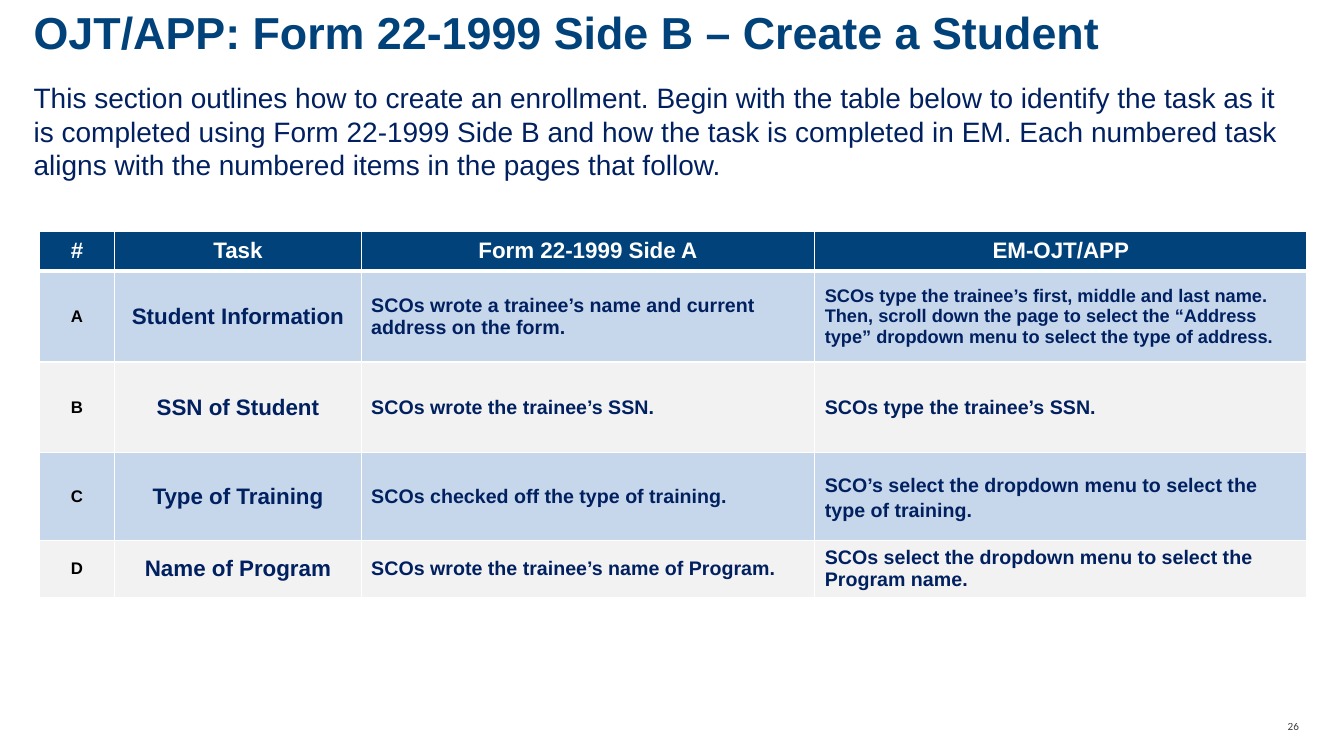
from lxml import etree
from pptx import Presentation
from pptx.dml.color import RGBColor
from pptx.enum.text import MSO_ANCHOR, PP_ALIGN
from pptx.oxml.ns import qn
from pptx.util import Pt

LEFT, CENTER, RIGHT = PP_ALIGN.LEFT, PP_ALIGN.CENTER, PP_ALIGN.RIGHT
TOP, MIDDLE = MSO_ANCHOR.TOP, MSO_ANCHOR.MIDDLE

COLORS = {
    "header": "004279",
    "navy": "002060",
    "band": "C7D7EB",
    "plain": "F2F2F2",
    "white": "FFFFFF",
    "black": "000000",
}

TITLE = "OJT/APP: Form 22-1999 Side B – Create a Student"
INTRO = (
    "This section outlines how to create an enrollment. Begin with the table "
    "below to identify the task as it is completed using Form 22-1999 Side B "
    "and how the task is completed in EM. Each numbered task aligns with the "
    "numbered items in the pages that follow."
)
HEADINGS = ["#", "Task", "Form 22-1999 Side A", "EM-OJT/APP"]
TASKS = [
    ["A", "Student Information",
     "SCOs wrote a trainee’s name and current address on the form.",
     "SCOs type the trainee’s first, middle and last name. Then, scroll down "
     "the page to select the “Address type” dropdown menu to select the type "
     "of address."],
    ["B", "SSN of Student",
     "SCOs wrote the trainee’s SSN.",
     "SCOs type the trainee’s SSN."],
    ["C", "Type of Training",
     "SCOs checked off the type of training.",
     "SCO’s select the dropdown menu to select the type of training."],
    ["D", "Name of Program",
     "SCOs wrote the trainee’s name of Program.",
     "SCOs select the dropdown menu to select the Program name."],
]
COLUMN_WIDTHS = [54, 176, 324, 351.5]
ROW_HEIGHTS = [28.8, 64.8, 64.8, 62.6, 38.9]
# Size, colour and alignment of each body column
COLUMN_STYLES = [
    (12, "black", CENTER),
    (16, "navy", CENTER),
    (14, "navy", LEFT),
    (14, "navy", LEFT),
]


def rgb(name):
    return RGBColor.from_string(COLORS[name])


def write(tf, text, size, color, bold=False, align=LEFT, font="Arial"):
    tf.text = text
    p = tf.paragraphs[0]
    p.alignment = align
    r = p.runs[0]
    r.font.name = font
    r.font.size = Pt(size)
    r.font.bold = bold
    r.font.color.rgb = rgb(color)
    return p


def place(sp, left, top, width, height, anchor=TOP):
    sp.left, sp.top = Pt(left), Pt(top)
    sp.width, sp.height = Pt(width), Pt(height)
    tf = sp.text_frame
    tf.word_wrap = True
    tf.vertical_anchor = anchor
    tf.margin_left = tf.margin_top = tf.margin_right = tf.margin_bottom = 0
    return tf


def add_text_box(s, box, anchor=TOP):
    return place(s.shapes.add_textbox(0, 0, 0, 0), *box, anchor)


def set_borders(cell, bottom=1):
    tc_pr = cell._tc.get_or_add_tcPr()
    widths = {"a:lnL": 1, "a:lnR": 1, "a:lnT": 1, "a:lnB": bottom}
    for i, (side, width) in enumerate(widths.items()):
        ln = etree.Element(qn(side), w=str(Pt(width)))
        fill = etree.SubElement(ln, qn("a:solidFill"))
        etree.SubElement(fill, qn("a:srgbClr"), val=COLORS["white"])
        tc_pr.insert(i, ln)


def fill_cell(cell, text, size, color, align, fill, bottom=1):
    cell.fill.solid()
    cell.fill.fore_color.rgb = rgb(fill)
    cell.vertical_anchor = MIDDLE
    set_borders(cell, bottom)
    return write(cell.text_frame, text, size, color, True, align)


def add_task_table(s):
    frame = s.shapes.add_table(
        len(ROW_HEIGHTS), len(COLUMN_WIDTHS), Pt(28), Pt(165),
        Pt(sum(COLUMN_WIDTHS)), Pt(sum(ROW_HEIGHTS)))
    table = frame.table
    for column, width in zip(table.columns, COLUMN_WIDTHS):
        column.width = Pt(width)
    for row, height in zip(table.rows, ROW_HEIGHTS):
        row.height = Pt(height)

    for col, heading in enumerate(HEADINGS):
        bottom = 3
        fill_cell(table.cell(0, col), heading, 16, "white", CENTER, "header", bottom)

    for row, task in enumerate(TASKS, start=1):
        fill = "band" if row % 2 else "plain"
        for col, (text, style) in enumerate(zip(task, COLUMN_STYLES)):
            p = fill_cell(table.cell(row, col), text, *style, fill)
            # The longest answer is smaller, the one in row C is looser
            if col == 3 and task[0] == "A":
                p.runs[0].font.size = Pt(13)
            elif col == 3 and task[0] == "C":
                p.line_spacing = 1.15


def add_page_number(s, number):
    tf = add_text_box(s, (898, 510.5, 30, 16.5), MIDDLE)
    p = write(tf, number, 8, "black", align=RIGHT, font="Calibri")
    color = p.runs[0]._r.find(".//" + qn("a:srgbClr"))
    etree.SubElement(color, qn("a:alpha"), val="75000")


def main():
    prs = Presentation()
    prs.slide_width, prs.slide_height = Pt(960), Pt(540)
    s = prs.slides.add_slide(prs.slide_layouts[5])

    # Title and introduction
    tf = place(s.shapes.title, 24, 10.8, 777, 28.8)
    write(tf, TITLE, 32, "header", bold=True).line_spacing = 0.8
    tf = add_text_box(s, (24, 57.6, 898, 70.6))
    write(tf, INTRO, 20, "navy").space_after = Pt(12)

    # Task table and page number
    add_task_table(s)
    add_page_number(s, "26")

    prs.save("out.pptx")


if __name__ == "__main__":
    main()
